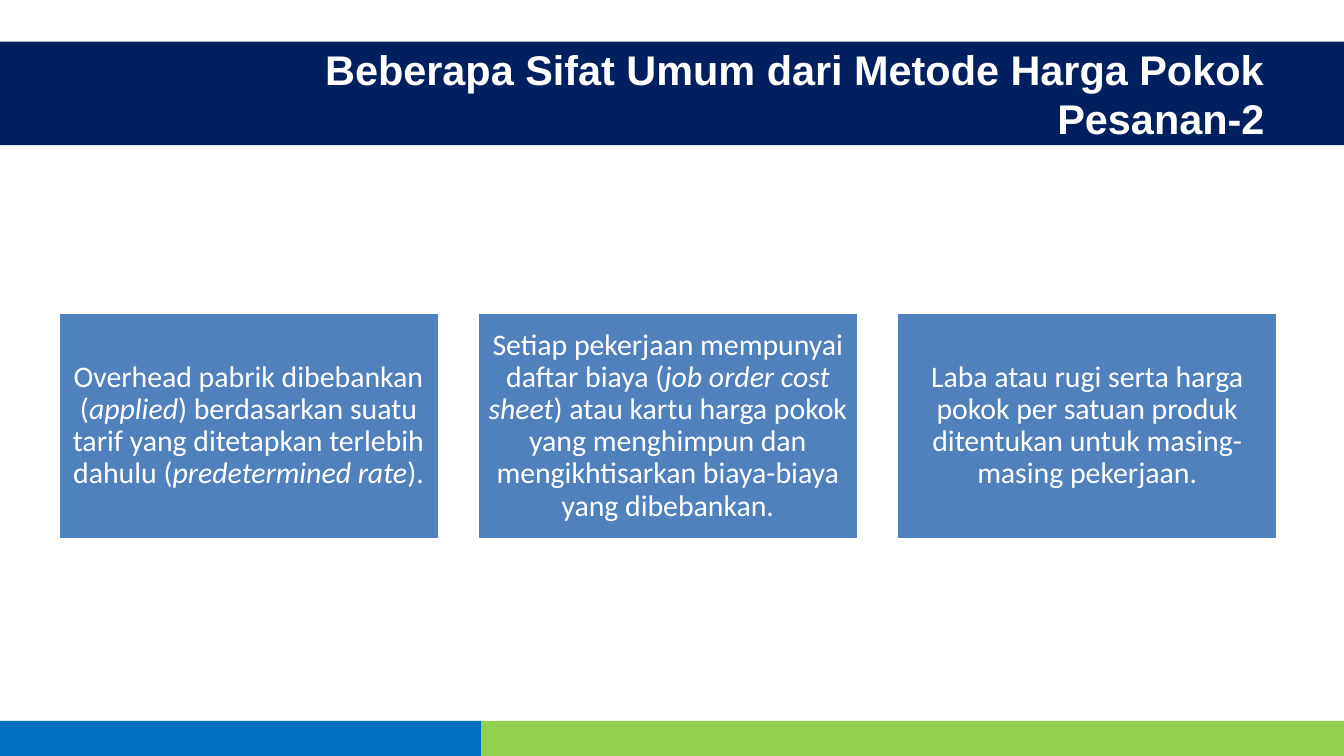
from dataclasses import dataclass

from pptx import Presentation, util as u
from pptx.dml.color import RGBColor
from pptx.enum import shapes, text


@dataclass(frozen=True)
class Theme:
    navy: str = "002060"
    blue: str = "0070C0"
    green: str = "92D050"
    card: str = "4F81BD"
    white: str = "FFFFFF"
    title_font: str = "Arial"
    body_font: str = "Calibri"
    title_size: float = 22.2
    body_size: float = 16


@dataclass(frozen=True)
class Box:
    left: float
    top: float
    width: float
    height: float

    def lengths(self) -> list:
        return [u.Inches(v) for v in (self.left, self.top, self.width, self.height)]


@dataclass(frozen=True)
class Run:
    text: str
    italic: bool = False


THEME = Theme()
WIDTH = 10
HEIGHT = WIDTH * 9 / 16
HEADER_TOP, HEADER_HEIGHT = 0.31, 0.77
FOOTER_HEIGHT, FOOTER_SPLIT = 0.26, 3.58
TITLE = "Beberapa Sifat Umum dari Metode Harga Pokok Pesanan-2"

# Cards: three equal columns
FIRST_CARD = Box(0.43, 2.32, 2.84, 1.7)
CARD_STEP = 3.12
CARDS = [
    [Run("Overhead pabrik dibebankan ("), Run("applied", True),
     Run(") berdasarkan suatu tarif yang ditetapkan terlebih dahulu ("),
     Run("predetermined rate", True), Run(").")],
    [Run("Setiap pekerjaan mempunyai daftar biaya ("), Run("job order cost sheet", True),
     Run(") atau kartu harga pokok yang menghimpun dan mengikhtisarkan "
         "biaya-biaya yang dibebankan.")],
    [Run("Laba atau rugi serta harga pokok per satuan produk ditentukan "
         "untuk masing-masing pekerjaan.")],
]


def add_rectangle(slide, box: Box, fill: str, outline: str | None = None):
    shape = slide.shapes.add_shape(shapes.MSO_SHAPE.RECTANGLE, *box.lengths())
    shape.shadow.inherit = False
    shape.fill.solid()
    shape.fill.fore_color.rgb = RGBColor.from_string(fill)
    if outline:
        shape.line.color.rgb = RGBColor.from_string(outline)
        shape.line.width = u.Pt(2)
    else:
        shape.line.fill.background()
    return shape


def write(shape, runs: list[Run], *, font: str, size: float, align, bold: bool = False,
          spacing: float = 1.0, inset: tuple[float, float] = (0.1, 0.05)) -> None:
    frame = shape.text_frame
    frame.word_wrap = True
    frame.auto_size = text.MSO_AUTO_SIZE.NONE
    frame.vertical_anchor = text.MSO_ANCHOR.MIDDLE
    frame.margin_left = frame.margin_right = u.Inches(inset[0])
    frame.margin_top = frame.margin_bottom = u.Inches(inset[1])
    paragraph = frame.paragraphs[0]
    paragraph.alignment = align
    paragraph.line_spacing = spacing
    for part in runs:
        run = paragraph.add_run()
        run.text = part.text
        run.font.name = font
        run.font.size = u.Pt(size)
        run.font.bold = bold
        run.font.italic = part.italic
        run.font.color.rgb = RGBColor.from_string(THEME.white)


def add_title(slide) -> None:
    title = slide.shapes.title
    title.left, title.top, title.width, title.height = Box(
        1.66, HEADER_TOP, 7.85, HEADER_HEIGHT).lengths()
    write(title, [Run(TITLE)], font=THEME.title_font, size=THEME.title_size,
          align=text.PP_ALIGN.RIGHT, bold=True)
    # Bring the title in front of the header band
    slide.shapes._spTree.append(title._element)


def main() -> None:
    presentation = Presentation()
    presentation.slide_width = u.Inches(WIDTH)
    presentation.slide_height = u.Inches(HEIGHT)
    slide = presentation.slides.add_slide(presentation.slide_layouts.get_by_name("Title Only"))

    # Footer and header bands
    footer_top = HEIGHT - FOOTER_HEIGHT
    add_rectangle(slide, Box(0, footer_top, FOOTER_SPLIT, FOOTER_HEIGHT), THEME.blue)
    add_rectangle(slide, Box(FOOTER_SPLIT, footer_top, WIDTH - FOOTER_SPLIT, FOOTER_HEIGHT),
                  THEME.green)
    add_rectangle(slide, Box(0, HEADER_TOP, WIDTH, HEADER_HEIGHT), THEME.navy)
    add_title(slide)

    # Cards
    for column, runs in enumerate(CARDS):
        box = Box(FIRST_CARD.left + column * CARD_STEP, FIRST_CARD.top,
                  FIRST_CARD.width, FIRST_CARD.height)
        card = add_rectangle(slide, box, THEME.card, THEME.white)
        write(card, runs, font=THEME.body_font, size=THEME.body_size,
              align=text.PP_ALIGN.CENTER, spacing=0.9, inset=(0.07, 0.07))

    presentation.save("out.pptx")


if __name__ == "__main__":
    main()
